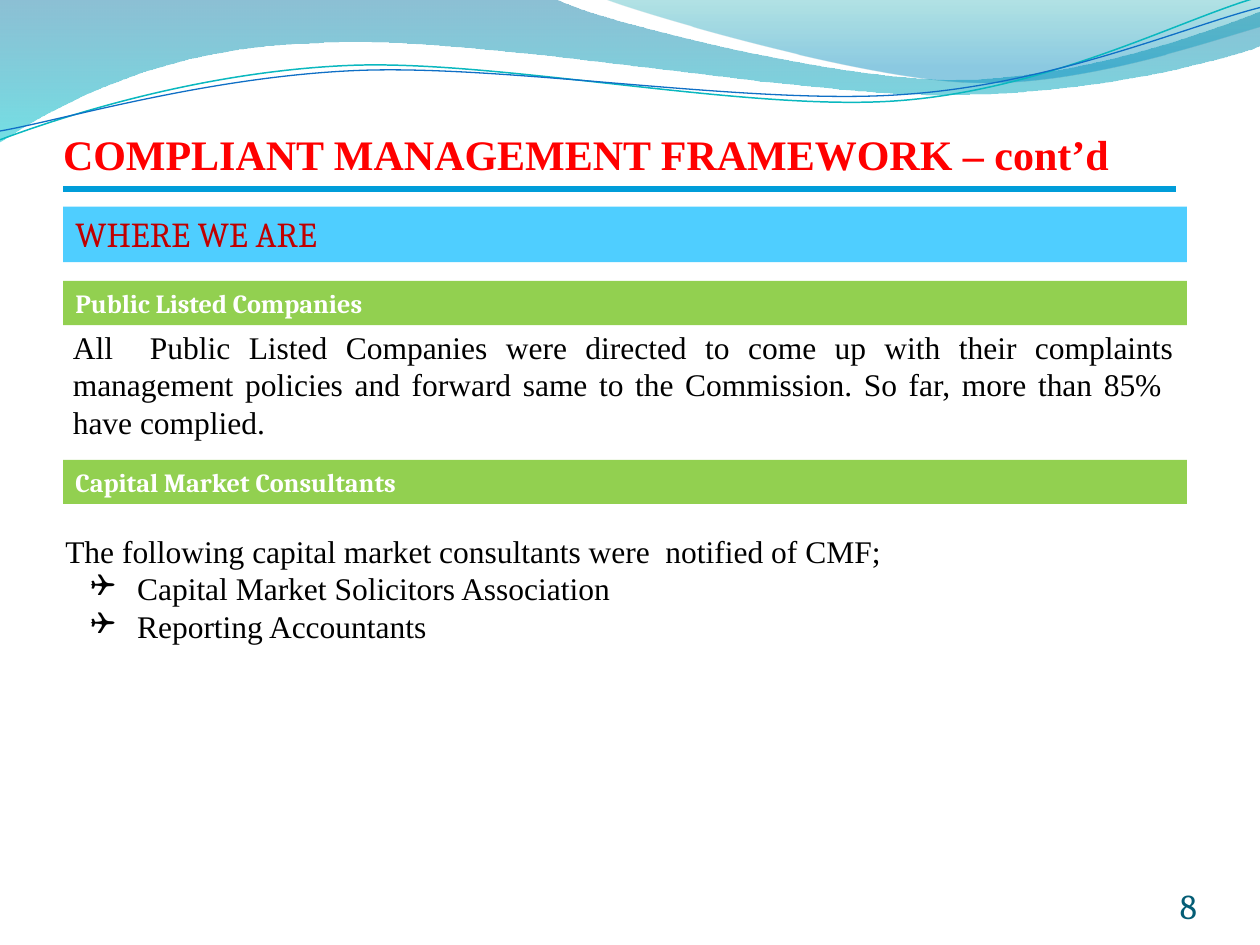
from dataclasses import dataclass

from lxml import etree
from pptx import Presentation
from pptx import util as u
from pptx.dml.color import RGBColor
from pptx.enum import shapes, text
from pptx.oxml import ns


@dataclass(frozen=True)
class Theme:
    serif: str = "Times New Roman"
    display: str = "Cambria"
    symbols: str = "Wingdings"
    red: str = "FF0000"
    dark_red: str = "C00000"
    rule: str = "009DD9"
    sky: str = "4FCEFF"
    green: str = "92D050"
    white: str = "FFFFFF"
    black: str = "000000"
    number: str = "045D75"
    title_size: int = 24
    banner_size: int = 20
    body_size: int = 18
    heading_size: int = 15


THEME = Theme()
WIDTH, HEIGHT = 10, 7.5
MARGIN = 0.05 * WIDTH
BAR_WIDTH = 8.92
UNITS = 100

TITLE = "COMPLIANT MANAGEMENT FRAMEWORK – cont’d"
PAGE_NUMBER = "8"
BANNER = "WHERE WE ARE"
HEADINGS = [("Public Listed Companies", 2.23), ("Capital Market Consultants", 3.65)]
DIRECTIVE = (
    "All  Public Listed Companies were directed to come up with their complaints "
    "management policies and forward same to the Commission. So far, more than 85%  "
    "have complied."
)
NOTICE = "The following capital market consultants were  notified of CMF;"
CONSULTANTS = ["Capital Market Solicitors Association", "Reporting Accountants"]

WAVES = [
    ([[(0, 0)], [(4.4, -0.01)],
      [(4.76, 0.17), (6.64, 0.63), (7.58, 0.63)],
      [(8.53, 0.63), (9.58, 0.26), (10, 0.09)],
      [(10.01, 0.36)],
      [(9.83, 0.44), (8.7, 0.76), (7.46, 0.75)],
      [(6.22, 0.75), (3.82, 0.28), (2.57, 0.34)],
      [(1.29, 0.36), (0.46, 0.83), (-0.01, 1.13)],
      [(0, 0)]],
     [(0, "0074A1", 45), (100, "00C6CF", 55)]),
    ([[(4.79, -0.01)],
      [(5.09, 0.11), (6.82, 0.62), (7.69, 0.65)],
      [(8.56, 0.69), (9.61, 0.32), (10, 0.21)],
      [(10, 0)], [(4.79, -0.01)]],
     [(0, "00A1A9", 30), (80, "008BBF", 45)]),
]
STRANDS = [
    ([[(0, 1.11)],
      [(0.48, 0.93), (1.58, 0.57), (2.77, 0.52)],
      [(3.95, 0.47), (5.93, 0.89), (7.13, 0.8)],
      [(8.33, 0.71), (9.38, 0.15), (9.98, -0.02)]], "0AB8BF", 0.85),
    ([[(0, 1.04)],
      [(0.47, 0.96), (1.64, 0.61), (2.83, 0.56)],
      [(4.03, 0.51), (5.97, 0.84), (7.17, 0.75)],
      [(8.36, 0.67), (9.41, 0.21), (10, 0.06)]], "0F6FC6", 0.75),
]


def inches(*lengths):
    return [u.Inches(length) for length in lengths]


def color(value):
    return RGBColor.from_string(value)


def add_curve(slide, outline, closed):
    steps = [[(round(x * UNITS), round(y * UNITS)) for x, y in step] for step in outline]
    anchors = [step[-1] for step in steps]
    left, top = (min(axis) for axis in zip(*anchors))
    builder = slide.shapes.build_freeform(*anchors[0], scale=u.Inches(1) / UNITS)
    builder.add_line_segments(anchors[1:], close=closed)
    shape = builder.convert_to_shape()
    shape.shadow.inherit = False
    segments = list(shape.element.iter(ns.qn("a:lnTo")))
    for segment, step in zip(segments, steps[1:]):
        if len(step) == 1:
            continue
        segment.tag = ns.qn("a:cubicBezTo")
        for index, (x, y) in enumerate(step[:-1]):
            handle = etree.Element(ns.qn("a:pt"), x=str(x - left), y=str(y - top))
            segment.insert(index, handle)
    return shape


def add_wave(slide, outline, stops):
    shape = add_curve(slide, outline, True)
    shape.line.fill.background()
    shape.fill.gradient()
    shape.fill.gradient_angle = 270
    for stop, (position, value, _) in zip(shape.fill.gradient_stops, stops):
        stop.position = position / 100
        stop.color.rgb = color(value)
    for node, (_, _, opacity) in zip(shape.element.iter(ns.qn("a:srgbClr")), stops):
        etree.SubElement(node, ns.qn("a:alpha"), val=str(opacity * 1000))


def add_strand(slide, outline, value, width):
    shape = add_curve(slide, outline, False)
    shape.fill.background()
    shape.line.color.rgb = color(value)
    shape.line.width = u.Pt(width)


def write(paragraph, words, font, size, value, bold=False, align=text.PP_ALIGN.LEFT):
    paragraph.alignment = align
    run = paragraph.add_run()
    run.text = words
    run.font.name = font
    run.font.size = u.Pt(size)
    run.font.bold = bold
    run.font.color.rgb = color(value)


def indent(paragraph, margin, first, bullet=None):
    properties = paragraph._p.get_or_add_pPr()
    properties.set("marL", str(u.Inches(margin)))
    properties.set("indent", str(u.Inches(first)))
    if bullet:
        etree.SubElement(properties, ns.qn("a:buFont"), typeface=THEME.symbols)
        etree.SubElement(properties, ns.qn("a:buChar"), char=bullet)


def set_frame(frame, anchor, insets=(0.1, 0.05, 0.1, 0.05)):
    frame.word_wrap = True
    frame.vertical_anchor = anchor
    (frame.margin_left, frame.margin_top,
     frame.margin_right, frame.margin_bottom) = inches(*insets)


def add_title(slide):
    title = slide.shapes.title
    title.left, title.top, title.width, title.height = inches(MARGIN, 0.77, 9, 0.65)
    set_frame(title.text_frame, text.MSO_ANCHOR.BOTTOM, (0, 0.05, 0, 0))
    title.text_frame.auto_size = text.MSO_AUTO_SIZE.NONE
    paragraph = title.text_frame.paragraphs[0]
    write(paragraph, TITLE, THEME.serif, THEME.title_size, THEME.red, True)
    indent(paragraph, 0.38, -0.38)
    rule = slide.shapes.add_connector(
        shapes.MSO_CONNECTOR.STRAIGHT, *inches(MARGIN, 1.5, 9.33, 1.5))
    rule.line.color.rgb = color(THEME.rule)
    rule.line.width = u.Pt(3)
    etree.SubElement(rule.element.spPr, ns.qn("a:effectLst"))


def add_bar(slide, words, top, height, fill, size, value, bold):
    bar = slide.shapes.add_shape(
        shapes.MSO_SHAPE.RECTANGLE, *inches(MARGIN, top, BAR_WIDTH, height))
    bar.shadow.inherit = False
    bar.fill.solid()
    bar.fill.fore_color.rgb = color(fill)
    bar.line.fill.background()
    set_frame(bar.text_frame, text.MSO_ANCHOR.TOP)
    write(bar.text_frame.paragraphs[0], words, THEME.display, size, value, bold)


def add_box(slide, left, top, width, height):
    frame = slide.shapes.add_textbox(*inches(left, top, width, height)).text_frame
    set_frame(frame, text.MSO_ANCHOR.TOP)
    return frame


def main():
    presentation = Presentation()
    presentation.slide_width, presentation.slide_height = inches(WIDTH, HEIGHT)
    slide = presentation.slides.add_slide(presentation.slide_layouts[5])
    for wave in WAVES:
        add_wave(slide, *wave)
    for strand in STRANDS:
        add_strand(slide, *strand)
    add_title(slide)

    add_bar(slide, BANNER, 1.64, 0.44, THEME.sky, THEME.banner_size, THEME.dark_red, False)
    for words, top in HEADINGS:
        add_bar(slide, words, top, 0.35, THEME.green, THEME.heading_size, THEME.white, True)

    body = (THEME.serif, THEME.body_size, THEME.black)
    directive = add_box(slide, 0.48, 2.55, 8.94, 1.01)
    write(directive.paragraphs[0], DIRECTIVE, *body, align=text.PP_ALIGN.JUSTIFY)
    notice = add_box(slide, 0.42, 4.17, 8.94, 1.01)
    write(notice.paragraphs[0], NOTICE, *body)
    for consultant in CONSULTANTS:
        paragraph = notice.add_paragraph()
        write(paragraph, consultant, *body)
        indent(paragraph, 0.57, -0.37, "❑")

    number = add_box(slide, 8.67, 6.95, 0.83, 0.4)
    set_frame(number, text.MSO_ANCHOR.BOTTOM, (0, 0, 0, 0))
    write(number.paragraphs[0], PAGE_NUMBER, THEME.display, THEME.banner_size,
          THEME.number, align=text.PP_ALIGN.RIGHT)
    presentation.save("out.pptx")


if __name__ == "__main__":
    main()
